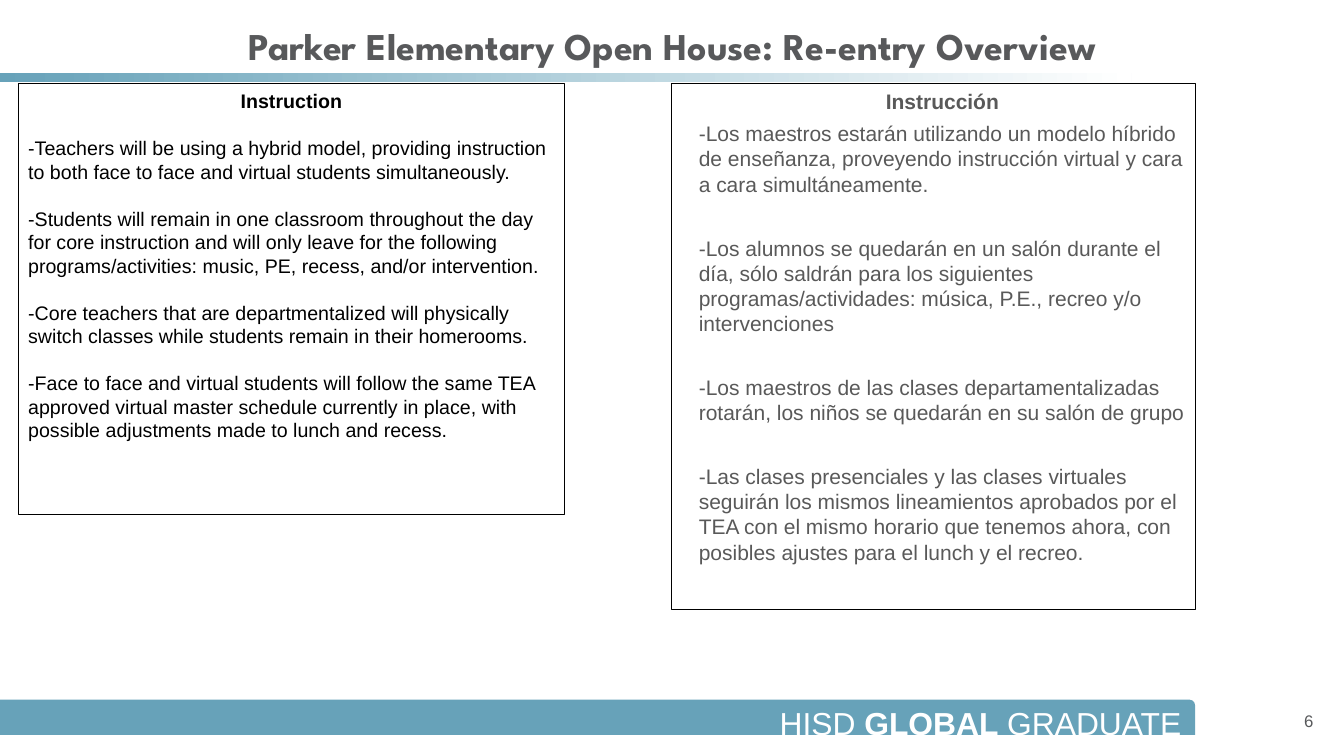
from dataclasses import dataclass

from lxml import etree
from pptx import Presentation
from pptx.dml.color import RGBColor
from pptx.enum.shapes import MSO_SHAPE
from pptx.enum.text import MSO_ANCHOR, MSO_AUTO_SIZE, PP_ALIGN
from pptx.oxml.ns import qn
from pptx.util import Cm, Pt

RECTANGLE, ROUND_CORNER = MSO_SHAPE.RECTANGLE, MSO_SHAPE.ROUND_1_RECTANGLE
LEFT, CENTER, RIGHT = PP_ALIGN.LEFT, PP_ALIGN.CENTER, PP_ALIGN.RIGHT
TOP, MIDDLE = MSO_ANCHOR.TOP, MSO_ANCHOR.MIDDLE
NO_AUTOFIT = MSO_AUTO_SIZE.NONE

COLORS = {"teal": "67A2B9", "white": "FFFFFF", "black": "000000",
          "title": "58595B", "spanish": "595959"}
BODY_FONT, TITLE_FONT = "Arial", "League Spartan"
TWO_CONTENT_LAYOUT = 3


@dataclass
class Box:
    left: float
    top: float
    width: float
    height: float

    def lengths(self) -> tuple:
        return Cm(self.left), Cm(self.top), Cm(self.width), Cm(self.height)


@dataclass
class Panel:
    placeholder: int
    box: Box
    heading: str
    points: list[str]
    size: float
    color: str
    indent: float
    heading_gap: float  # points between the heading and the first item
    item_gap: float     # points between items


PANELS = [
    Panel(1, Box(0.46, 2.11, 13.77, 10.85), "Instruction", [
        "-Teachers will be using a hybrid model, providing instruction to both "
        "face to face and virtual students simultaneously.",
        "-Students will remain in one classroom throughout the day for core "
        "instruction and will only leave for the following programs/activities: "
        "music, PE, recess, and/or intervention.",
        "-Core teachers that are departmentalized will physically switch classes "
        "while students remain in their homerooms.",
        "-Face to face and virtual students will follow the same TEA approved "
        "virtual master schedule currently in place, with possible adjustments "
        "made to lunch and recess.",
    ], 14, "black", 0, 16.8, 16.8),
    Panel(2, Box(16.93, 2.11, 13.21, 13.24), "Instrucción", [
        "-Los maestros estarán utilizando un modelo híbrido de enseñanza, "
        "proveyendo instrucción virtual y cara a cara simultáneamente.",
        "-Los alumnos se quedarán en un salón durante el día, sólo saldrán para "
        "los siguientes programas/actividades: música, P.E., recreo y/o "
        "intervenciones",
        "-Los maestros de las clases departamentalizadas rotarán, los niños se "
        "quedarán en su salón de grupo",
        "-Las clases presenciales y las clases virtuales seguirán los mismos "
        "lineamientos aprobados por el TEA con el mismo horario que tenemos "
        "ahora, con posibles ajustes para el lunch y el recreo.",
    ], 15, "spanish", 0.43, 4.8, 27.6),
]


def rgb(name: str) -> RGBColor:
    return RGBColor.from_string(COLORS[name])


def place(shape, box: Box) -> None:
    shape.left, shape.top, shape.width, shape.height = box.lengths()


def style(font, size: float, color: str, bold: bool = False,
          name: str = BODY_FONT) -> None:
    font.name, font.size, font.bold = name, Pt(size), bold
    font.color.rgb = rgb(color)


def set_frame(frame, anchor, side: float = 0.25, end: float = 0.13) -> None:
    frame.word_wrap = True
    frame.auto_size = NO_AUTOFIT
    frame.vertical_anchor = anchor
    frame.margin_left = frame.margin_right = Cm(side)
    frame.margin_top = frame.margin_bottom = Cm(end)


def add_bar(slide, kind, box: Box):
    bar = slide.shapes.add_shape(kind, *box.lengths())
    bar.shadow.inherit = False
    bar.line.fill.background()
    return bar


def fill_panel(slide, panel: Panel) -> None:
    body = slide.placeholders[panel.placeholder]
    place(body, panel.box)
    body.line.color.rgb = rgb("black")
    body.line.width = Pt(0.75)
    frame = body.text_frame
    set_frame(frame, TOP)
    frame.text = "\n".join([panel.heading, *panel.points])
    for row, paragraph in enumerate(frame.paragraphs):
        properties = paragraph._p.get_or_add_pPr()
        properties.set("marL", str(Cm(panel.indent)))
        properties.set("indent", "0")
        etree.SubElement(properties, qn("a:buNone"))
        gap = (0, panel.heading_gap)[row] if row < 2 else panel.item_gap
        paragraph.space_before = Pt(gap)
        paragraph.alignment = LEFT if row else CENTER
        for run in paragraph.runs:
            style(run.font, panel.size, panel.color, bold=row == 0)


def main() -> None:
    deck = Presentation()
    deck.slide_width, deck.slide_height = Cm(33.87), Cm(19.05)
    slide = deck.slides.add_slide(deck.slide_layouts[TWO_CONTENT_LAYOUT])

    # Fading rule below the title
    title_rule = add_bar(slide, RECTANGLE, Box(0, 1.85, 28.52, 0.23))
    title_rule.fill.gradient()
    title_rule.fill.gradient_angle = 0
    for stop, color, position in zip(title_rule.fill.gradient_stops,
                                     ("teal", "white"), (0, 1)):
        stop.color.rgb = rgb(color)
        stop.position = position

    # Footer band with the slogan
    footer_band = add_bar(slide, ROUND_CORNER, Box(0, 17.63, 30.12, 0.89))
    footer_band.fill.solid()
    footer_band.fill.fore_color.rgb = rgb("teal")
    slogan = slide.shapes.add_textbox(*Box(12.73, 17.55, 17.37, 0.99).lengths())
    set_frame(slogan.text_frame, TOP, 0.33, 0.18)
    slogan_line = slogan.text_frame.paragraphs[0]
    slogan_line.alignment = RIGHT
    for words, bold in (("HISD ", False), ("GLOBAL", True), (" GRADUATE", False)):
        run = slogan_line.add_run()
        run.text = words
        style(run.font, 22.7, "white", bold)

    # Title
    title = slide.shapes.title
    place(title, Box(1.7, 0.41, 30.48, 1.45))
    set_frame(title.text_frame, MIDDLE)
    title.text_frame.text = "Parker Elementary Open House: Re-entry Overview"
    heading = title.text_frame.paragraphs[0]
    heading.alignment = CENTER
    style(heading.runs[0].font, 27, "title", True, TITLE_FONT)

    # English and Spanish panels
    for panel in PANELS:
        fill_panel(slide, panel)

    # Slide number
    page_number = slide.shapes.add_textbox(*Box(30.89, 17.65, 2.21, 1.02).lengths())
    set_frame(page_number.text_frame, MIDDLE, 0)
    page_number.text_frame.text = "6"
    page_line = page_number.text_frame.paragraphs[0]
    page_line.alignment = RIGHT
    style(page_line.runs[0].font, 12, "title")

    deck.save("out.pptx")


if __name__ == "__main__":
    main()
